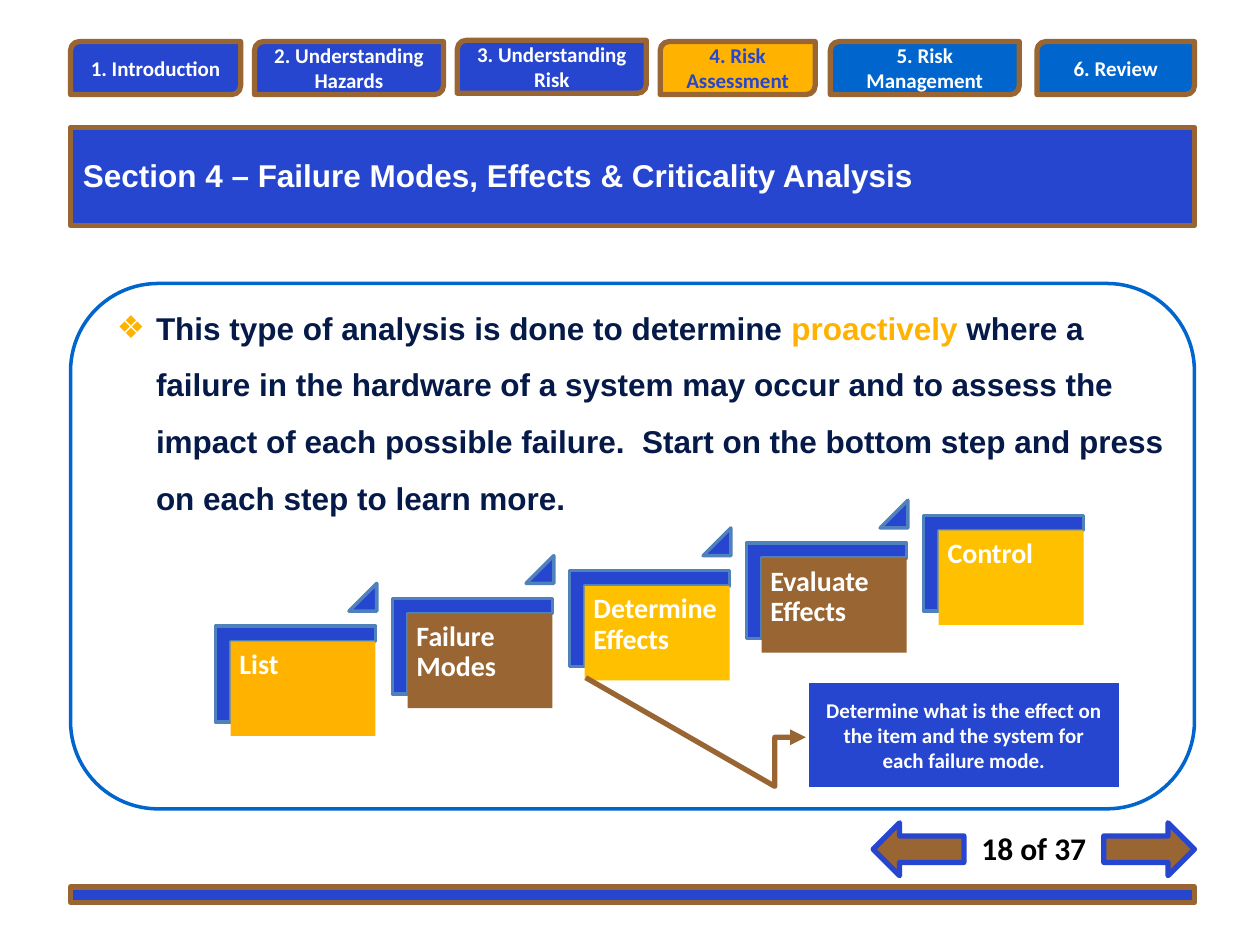
"""Build the failure modes, effects and criticality analysis slide."""
from lxml import etree
from pptx import Presentation
from pptx import util as u
from pptx.dml.color import RGBColor
from pptx.enum import shapes, text
from pptx.oxml.ns import qn

BLUE = RGBColor(0x26, 0x46, 0xD0)
SKY = RGBColor(0x00, 0x65, 0xCC)
STEEL = RGBColor(0x4F, 0x81, 0xBD)
BROWN = RGBColor(0x99, 0x65, 0x32)
AMBER = RGBColor(0xFF, 0xB3, 0x00)
GOLD = RGBColor(0xFF, 0xC0, 0x00)
NAVY = RGBColor(0x06, 0x1A, 0x49)
WHITE = RGBColor(0xFF, 0xFF, 0xFF)
BLACK = RGBColor(0x00, 0x00, 0x00)

MSO = shapes.MSO_SHAPE
CENTER = text.PP_ALIGN.CENTER
LEFT = text.PP_ALIGN.LEFT

prs = Presentation()
prs.slide_width, prs.slide_height = u.Inches(10), u.Inches(7.5)
s = prs.slides.add_slide(prs.slide_layouts[6])


def add_shape(kind, box, fill=None, line=None, width=3, adj=(), outline=None):
    if outline:
        points = [(u.Inches(box[0] + dx), u.Inches(box[1] + dy)) for dx, dy in outline]
        builder = s.shapes.build_freeform(*points[0])
        builder.add_line_segments(points[1:], close=True)
        sp = builder.convert_to_shape()
    else:
        sp = s.shapes.add_shape(kind, *map(u.Inches, box))
    sp.shadow.inherit = False
    for part, color in ((sp.fill, fill), (sp.line.fill, line)):
        if color is None:
            part.background()
        else:
            part.solid()
            part.fore_color.rgb = color
    if line is not None:
        sp.line.width = u.Pt(width)
    for i, value in enumerate(adj):
        sp.adjustments[i] = value
    return sp


def add_text(sp, runs, size, font="Calibri", align=CENTER, **frame):
    tf = sp.text_frame
    for name, value in {"word_wrap": True, **frame}.items():
        setattr(tf, name, value)
    p = tf.paragraphs[0]
    p.alignment = align
    for words, color in runs:
        r = p.add_run()
        r.text = words
        for name, value in {"name": font, "size": u.Pt(size), "bold": True}.items():
            setattr(r.font, name, value)
        r.font.color.rgb = color
    return p


GROW = {"auto_size": text.MSO_AUTO_SIZE.SHAPE_TO_FIT_TEXT}
MIDDLE = {"vertical_anchor": text.MSO_ANCHOR.MIDDLE}
INSETS = {f"margin_{side}": u.Inches(0.07) for side in ("left", "top", "right", "bottom")}

add_shape(MSO.ROUNDED_RECTANGLE, (0.56, 2.25, 8.92, 4.17), line=SKY, width=2)
sp = s.shapes.add_textbox(*map(u.Inches, (0.83, 2.25, 8.65, 2.37)))
p = add_text(sp, [
    ("This type of analysis is done to determine ", NAVY),
    ("proactively", AMBER),
    (" where a failure in the hardware of a system may occur and to assess the impact "
     "of each possible failure.  Start on the bottom step and press on each step to "
     "learn more.", NAVY),
], 18, "Arial", LEFT, **GROW)
p.line_spacing = 1.5
pPr = p._p.get_or_add_pPr()
pPr.set("marL", str(u.Inches(0.31)))
pPr.set("indent", str(-u.Inches(0.31)))
color = etree.SubElement(pPr, qn("a:buClr"))
etree.SubElement(color, qn("a:srgbClr"), val=str(AMBER))
etree.SubElement(pPr, qn("a:buFont"), typeface="Arial")
etree.SubElement(pPr, qn("a:buChar"), char="❖")

sp = s.shapes.add_textbox(*map(u.Inches, (7.65, 6.53, 1.11, 0.4)))
add_text(sp, [("18 of 37", BLACK)], 18, **GROW)

add_shape(MSO.RECTANGLE, (0.56, 1.01, 8.92, 0.78), BLUE, BROWN)
sp = s.shapes.add_textbox(*map(u.Inches, (0.56, 1.19, 7.57, 0.4)))
title = "Section 4 – Failure Modes, Effects & Criticality Analysis"
add_text(sp, [(title, WHITE)], 18, "Arial", LEFT, **GROW)

steps = [("List", AMBER), ("Failure Modes", BROWN), ("Determine Effects", GOLD),
         ("Evaluate Effects", BROWN), ("Control", GOLD)]
corner = [(0, 0), (1.27, 0), (1.27, 0.12), (0.12, 0.12), (0.12, 0.76), (0, 0.76)]
for i, (label, fill) in enumerate(steps):
    x, y = 1.83 + 5.62 * i / 4, 5.09 - 0.22 * i
    add_shape(None, (x - 0.12, y - 0.12), BLUE, STEEL, 2, outline=corner)
    sp = add_shape(MSO.RECTANGLE, (x, y, 1.15, 0.75), fill)
    p = add_text(sp, [(label, WHITE)], 16, align=LEFT,
                 vertical_anchor=text.MSO_ANCHOR.TOP, **INSETS)
    p.line_spacing = 0.9
    if i < len(steps) - 1:
        add_shape(MSO.ISOSCELES_TRIANGLE, (x + 0.94, y - 0.46, 0.22, 0.22), BLUE, STEEL,
                  2, (1,))

tabs = [
    ("1. Introduction", 0.56, 0.33, 1.35, BLUE, WHITE),
    ("2. Understanding Hazards", 2.02, 0.33, 1.5, BLUE, WHITE),
    ("3. Understanding Risk", 3.63, 0.32, 1.5, BLUE, WHITE),
    ("4. Risk Assessment", 5.24, 0.33, 1.23, AMBER, BLUE),
    ("5. Risk Management", 6.59, 0.33, 1.5, SKY, WHITE),
    ("6. Review", 8.23, 0.33, 1.25, SKY, WHITE),
]
for label, x, y, w, fill, ink in tabs:
    sp = add_shape(MSO.ROUND_2_DIAG_RECTANGLE, (x, y, w, 0.42), fill, BROWN)
    add_text(sp, [(label, ink)], 12, **MIDDLE)

add_shape(MSO.RECTANGLE, (0.56, 7.04, 8.92, 0.12), BLUE, BROWN)
for kind, x in ((MSO.RIGHT_ARROW, 8.76), (MSO.LEFT_ARROW, 6.93)):
    add_shape(kind, (x, 6.53, 0.72, 0.42), BROWN, BLUE)

sp = add_shape(MSO.LINE_CALLOUT_3_NO_BORDER, (6.42, 5.42, 2.46, 0.83), BLUE, BROWN,
               adj=(0.52, -0.01, 0.52, -0.11, 0.99, -0.11, -0.05, -0.72))
ln = sp._element.spPr.find(qn("a:ln"))
etree.SubElement(ln, qn("a:headEnd"), type="triangle")
note = "Determine what is the effect on the item and the system for each failure mode."
add_text(sp, [(note, WHITE)], 12, **MIDDLE)

prs.save("out.pptx")
